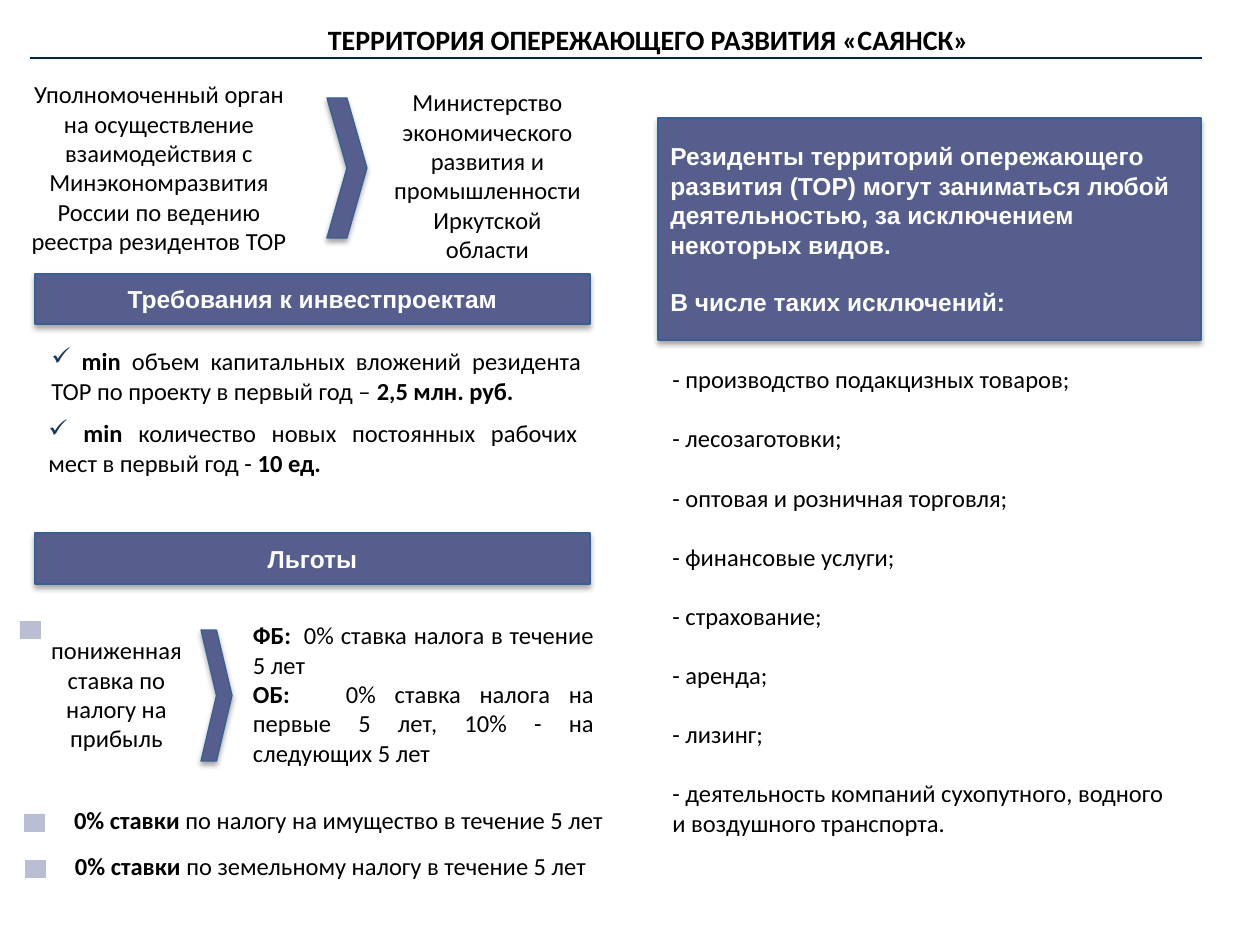
from lxml import etree
from pptx import Presentation
from pptx.dml.color import RGBColor
from pptx.enum.shapes import MSO_CONNECTOR as CONN, MSO_SHAPE as SHAPE
from pptx.enum.text import MSO_ANCHOR as ANCHOR, MSO_AUTO_SIZE as AUTO, PP_ALIGN as AL
from pptx.oxml.ns import qn
from pptx.util import Emu, Pt

SCALE = 914400 / 126  # EMU in one px
NAVY, SLATE, EDGE, PALE = "002060", "555E8D", "376092", "B9BED5"
BLACK, WHITE, CHECK = "000000", "FFFFFF", "17375E"

EXCLUSIONS = [
    "производство подакцизных товаров;",
    "лесозаготовки;",
    "оптовая и розничная торговля;",
    "финансовые услуги;",
    "страхование;",
    "аренда;",
    "лизинг;",
    "деятельность компаний сухопутного, водного и воздушного транспорта.",
]


def px(n):
    return Emu(round(n * SCALE))


def rgb(value):
    return RGBColor.from_string(value)


def set_font(p, size=14, name="Calibri", color=BLACK, bold=None):
    f = p.font
    f.size, f.name, f.bold = Pt(size), name, bold
    f.color.rgb = rgb(color)


def sub(parent, tag, **attrs):
    return etree.SubElement(parent, qn(tag), {k: str(v) for k, v in attrs.items()})


def write(tf, texts, align, gap=0, check=False, tabs=(), **font):
    """Fill a frame with paragraphs; parts between asterisks are bold."""
    tf.word_wrap = True
    for i, text in enumerate(texts):
        p = tf.paragraphs[0] if i == 0 else tf.add_paragraph()
        p.alignment = align
        if i and gap:
            p.space_before = Pt(gap)
        pPr = p._p.get_or_add_pPr()
        if check:
            pPr.set("marL", "0")
            pPr.set("indent", "0")
            sub(sub(pPr, "a:buClr"), "a:srgbClr", val=CHECK)
            sub(pPr, "a:buChar", char="✓")
        if tabs:
            sub(sub(pPr, "a:tabLst"), "a:tab", pos=px(tabs[i]), algn="l")
        set_font(p, **font)
        for j, part in enumerate(text.split("*")):
            if part:
                r = p.add_run()
                r.text = part
                if j % 2:
                    r.font.bold = True


def add_text(s, x, y, w, h, texts, align=AL.LEFT, inset=5, **options):
    tf = s.shapes.add_textbox(px(x), px(y), px(w), px(h)).text_frame
    tf.margin_left = tf.margin_right = px(inset)
    write(tf, texts, align, **options)


def add_block(s, kind, x, y, w, h):
    """Slate shape with a thin edge and a soft shadow below."""
    sp = s.shapes.add_shape(kind, px(x), px(y), px(w), px(h))
    sp.fill.solid()
    sp.fill.fore_color.rgb = rgb(SLATE)
    sp.line.color.rgb = rgb(EDGE)
    sp.line.width = Pt(0.75)
    sp.shadow.inherit = False
    effects = sp._element.spPr.find(qn("a:effectLst"))
    shadow = sub(effects, "a:outerShdw", blurRad=Pt(3.1), dist=Pt(1.8),
                 dir=5400000, rotWithShape=0)
    sub(sub(shadow, "a:srgbClr", val=BLACK), "a:alpha", val=35000)
    return sp


def add_banner(s, x, y, w, h, texts, align=AL.CENTER, gap=0):
    tf = add_block(s, SHAPE.RECTANGLE, x, y, w, h).text_frame
    tf.vertical_anchor = ANCHOR.MIDDLE
    write(tf, texts, align, gap, name="Arial", color=WHITE, bold=True)


def add_marker(s, x, y):
    sp = s.shapes.add_shape(SHAPE.RECTANGLE, px(x), px(y), px(21), px(18))
    sp.fill.solid()
    sp.fill.fore_color.rgb = rgb(PALE)
    sp.line.fill.background()
    sp.shadow.inherit = False


def add_title(s, text):
    title = s.shapes.title
    title.left, title.top, title.width, title.height = px(62), px(16), px(1173), px(47)
    tf = title.text_frame
    tf.auto_size = AUTO.NONE
    tf.vertical_anchor = ANCHOR.TOP
    write(tf, [text], AL.CENTER, size=16, bold=True)
    rule = s.shapes.add_connector(CONN.STRAIGHT, px(30), px(58), px(1202), px(58))
    rule.line.color.rgb = rgb(NAVY)
    rule.line.width = Pt(1.5)
    sub(rule._element.spPr, "a:effectLst")


def add_authority(s):
    add_text(s, 25, 73, 268, 190, [
        "Уполномоченный орган на осуществление взаимодействия с "
        "Минэкономразвития России по ведению реестра резидентов ТОР"], AL.CENTER)
    add_block(s, SHAPE.CHEVRON, 327, 98, 40, 140)
    add_text(s, 385, 81, 205, 190, [
        "Министерство экономического развития и промышленности "
        "Иркутской области"], AL.CENTER)


def add_requirements(s):
    add_banner(s, 35, 274, 555, 50, ["Требования к инвестпроектам"])
    add_text(s, 39, 340, 555, 72, [
        " *min* объем капитальных вложений резидента ТОР по проекту "
        "в первый год – *2,5 млн. руб.*"], AL.JUSTIFY, inset=12.6, check=True)
    add_text(s, 36, 412, 554, 72, [
        " *min* количество новых постоянных рабочих мест "
        "в первый год - *10 ед.*"], AL.JUSTIFY, inset=12.6, check=True)


def add_benefits(s):
    add_banner(s, 35, 533, 555, 51, ["Льготы"])
    for x, y in ((20, 621), (24, 814), (25, 860)):
        add_marker(s, x, y)
    add_text(s, 40, 629, 153, 131, ["пониженная ставка по налогу на прибыль"], AL.CENTER)
    add_block(s, SHAPE.CHEVRON, 201, 630, 31, 131)
    add_text(s, 248, 614, 351, 161, [
        "*ФБ:*\t0% ставка налога в течение 5 лет",
        "*ОБ:*\t0% ставка налога на первые 5 лет, 10% - на следующих 5 лет"],
        AL.JUSTIFY, tabs=(51, 93))
    add_text(s, 69, 799, 561, 43, ["*0% ставки* по налогу на имущество в течение 5 лет"])
    add_text(s, 70, 845, 541, 43, ["*0% ставки* по земельному налогу в течение 5 лет"])


def add_exclusions(s):
    add_banner(s, 658, 118, 543, 222, [
        "Резиденты территорий опережающего развития (ТОР) могут заниматься "
        "любой деятельностью, за исключением некоторых видов.",
        "В числе таких исключений:"], AL.LEFT, gap=16)
    add_text(s, 660, 358, 517, 488, [f"- {item}" for item in EXCLUSIONS],
             inset=12.6, gap=17)


def main():
    prs = Presentation()
    prs.slide_width, prs.slide_height = px(1260), px(945)
    s = prs.slides.add_slide(prs.slide_layouts[5])
    add_title(s, "ТЕРРИТОРИЯ ОПЕРЕЖАЮЩЕГО РАЗВИТИЯ «САЯНСК»")
    add_authority(s)
    add_requirements(s)
    add_benefits(s)
    add_exclusions(s)
    prs.save("out.pptx")


if __name__ == "__main__":
    main()
